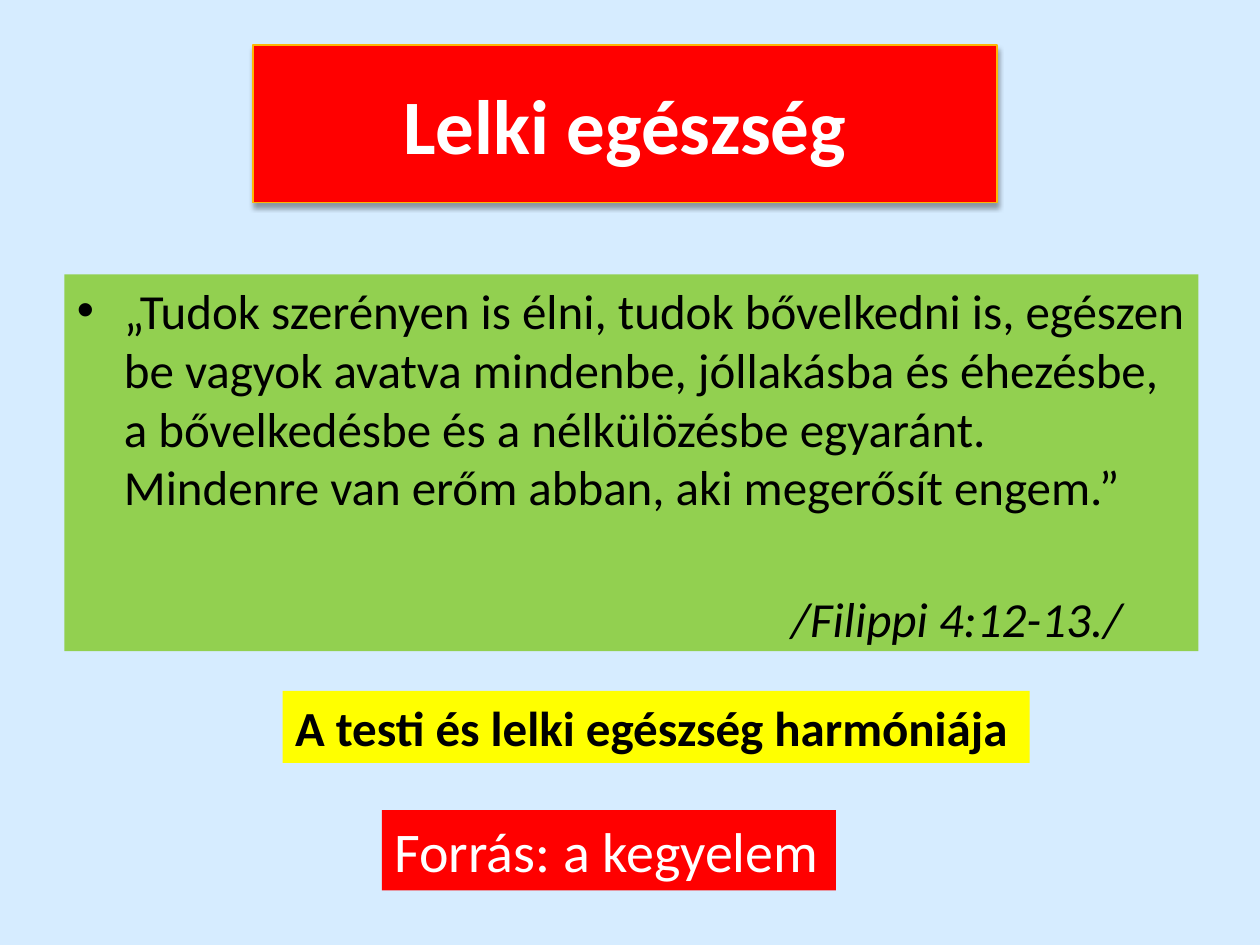
from dataclasses import dataclass

import pptx
import pptx.dml.color
import pptx.enum.text
import pptx.oxml
import pptx.oxml.ns
import pptx.util

Cm = pptx.util.Cm
Pt = pptx.util.Pt
PP_ALIGN = pptx.enum.text.PP_ALIGN
ANCHOR = pptx.enum.text.MSO_ANCHOR
TITLE_ONLY = 5


@dataclass(frozen=True)
class Theme:
    font: str = "Calibri"
    background: str = "D6ECFF"
    red: str = "FF0000"
    green: str = "92D050"
    yellow: str = "FFFF00"
    border: str = "FEB604"
    light: str = "FFFFFF"
    dark: str = "000000"
    title_size: int = 44
    source_size: int = 32
    body_size: int = 28


THEME = Theme()


def paint(fill, color):
    fill.solid()
    fill.fore_color.rgb = pptx.dml.color.RGBColor.from_string(color)


def write(shape, text, *, size=THEME.body_size, color=THEME.dark, bold=False,
          italic=False, align=PP_ALIGN.LEFT, anchor=ANCHOR.TOP):
    frame = shape.text_frame
    frame.word_wrap = True
    frame.auto_size = pptx.enum.text.MSO_AUTO_SIZE.NONE
    frame.vertical_anchor = anchor
    paragraph = frame.paragraphs[0]
    paragraph.alignment = align
    run = paragraph.add_run()
    run.text = text
    run.font.name = THEME.font
    run.font.size = Pt(size)
    run.font.bold = bold
    run.font.italic = italic
    paint(run.font.fill, color)
    return paragraph


def add_bullet(paragraph, indent):
    properties = paragraph._p.get_or_add_pPr()
    properties.set("marL", str(indent))
    properties.set("indent", str(-indent))
    namespace = pptx.oxml.ns.nsdecls("a")
    for markup in (f'<a:buFont {namespace} typeface="Arial"/>',
                   f'<a:buChar {namespace} char="•"/>'):
        properties.append(pptx.oxml.parse_xml(markup))


def add_drop_shadow(shape):
    shape._element.spPr.append(pptx.oxml.parse_xml(
        f'<a:effectLst {pptx.oxml.ns.nsdecls("a")}>'
        f'<a:outerShdw blurRad="{Pt(3.1)}" dist="{Pt(1.8)}" dir="5400000" rotWithShape="0">'
        f'<a:srgbClr val="{THEME.dark}"><a:alpha val="35000"/></a:srgbClr>'
        '</a:outerShdw></a:effectLst>'))


def place_title(slide, left, top, width, height):
    title = slide.shapes.title
    title.left, title.top, title.width, title.height = left, top, width, height
    paint(title.fill, THEME.red)
    paint(title.line.fill, THEME.border)
    title.line.width = Pt(0.75)
    add_drop_shadow(title)
    write(title, "Lelki egészség", size=THEME.title_size, color=THEME.light,
          bold=True, align=PP_ALIGN.CENTER, anchor=ANCHOR.MIDDLE)


def place_quotation(slide, left, top, width, height):
    """Place the Bible verse with its reference at the lower right."""
    verse = slide.shapes.add_textbox(left, top, width, height)
    paint(verse.fill, THEME.green)
    paragraph = write(
        verse,
        "„Tudok szerényen is élni, tudok bővelkedni is, egészen be vagyok "
        "avatva mindenbe, jóllakásba és éhezésbe, a bővelkedésbe és a "
        "nélkülözésbe egyaránt. Mindenre van erőm abban, aki megerősít engem.”")
    add_bullet(paragraph, Cm(0.95))

    reference = slide.shapes.add_textbox(
        left + Cm(14.4), top + height - Cm(1.4), Cm(7.3), Cm(1.45))
    write(reference, "/Filippi 4:12-13./", italic=True)


def place_banner(slide, left, top, width, height, text, fill, **text_format):
    banner = slide.shapes.add_textbox(left, top, width, height)
    paint(banner.fill, fill)
    write(banner, text, **text_format)


def main():
    deck = pptx.Presentation()
    deck.slide_width, deck.slide_height = Cm(25.4), Cm(19.05)
    slide = deck.slides.add_slide(deck.slide_layouts[TITLE_ONLY])
    paint(slide.background.fill, THEME.background)

    place_title(slide, Cm(5.1), Cm(0.91), Cm(15), Cm(3.18))
    place_quotation(slide, Cm(1.3), Cm(5.53), Cm(22.86), Cm(7.6))
    place_banner(slide, Cm(7.7), Cm(16.33), Cm(9.15), Cm(1.62),
                 "Forrás: a kegyelem", THEME.red,
                 size=THEME.source_size, color=THEME.light)
    place_banner(slide, Cm(5.7), Cm(13.93), Cm(15.06), Cm(1.45),
                 "A testi és lelki egészség harmóniája", THEME.yellow, bold=True)
    deck.save("out.pptx")


if __name__ == "__main__":
    main()
